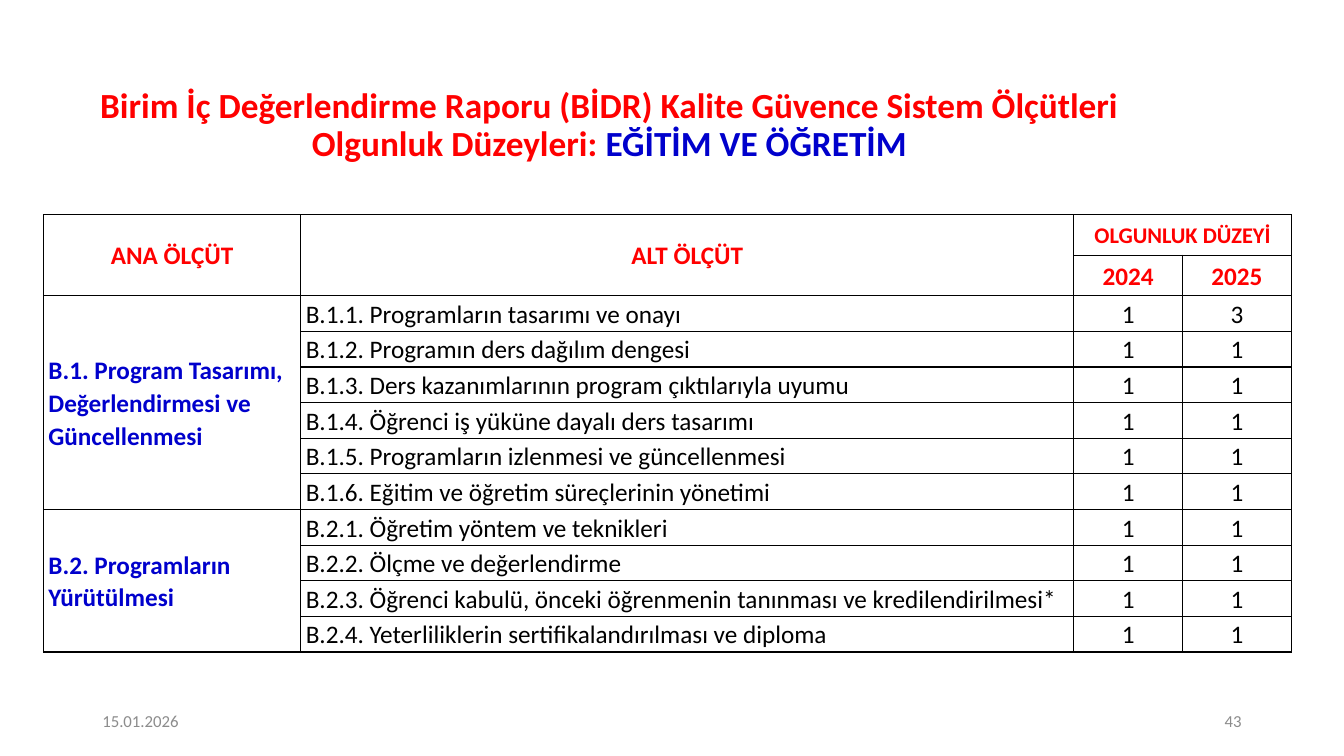
import pptx
import pptx.util
import pptx.dml.color
import pptx.enum.text
import pptx.oxml
import pptx.oxml.ns

Pt = pptx.util.Pt
ALIGN = pptx.enum.text.PP_ALIGN
MIDDLE = pptx.enum.text.MSO_ANCHOR.MIDDLE
COLORS = {"red": "FF0000", "blue": "0000CC", "gray": "8C8C8C", "black": "000000"}
COLS = [183.8, 552.2, 77.7, 77.7]
HEAD, ROW = 28.9, 25.46
YEARS = ["2024", "2025"]
GROUPS = [
    ("B.1. Program Tasarımı, Değerlendirmesi ve Güncellenmesi", [
        ("B.1.1. Programların tasarımı ve onayı", 1, 3),
        ("B.1.2. Programın ders dağılım dengesi", 1, 1),
        ("B.1.3. Ders kazanımlarının program çıktılarıyla uyumu", 1, 1),
        ("B.1.4. Öğrenci iş yüküne dayalı ders tasarımı", 1, 1),
        ("B.1.5. Programların izlenmesi ve güncellenmesi", 1, 1),
        ("B.1.6. Eğitim ve öğretim süreçlerinin yönetimi", 1, 1),
    ]),
    ("B.2. Programların Yürütülmesi", [
        ("B.2.1. Öğretim yöntem ve teknikleri", 1, 1),
        ("B.2.2. Ölçme ve değerlendirme", 1, 1),
        ("B.2.3. Öğrenci kabulü, önceki öğrenmenin tanınması ve kredilendirilmesi*", 1, 1),
        ("B.2.4. Yeterliliklerin sertifikalandırılması ve diploma", 1, 1),
    ]),
]


def write(para, text, size=18, color="black", bold=False, align=ALIGN.LEFT, space=1.0):
    para.alignment = align
    para.line_spacing = space
    run = para.add_run()
    run.text = text
    run.font.name = "Calibri"
    run.font.size = Pt(size)
    run.font.bold = bold
    run.font.color.rgb = pptx.dml.color.RGBColor.from_string(COLORS[color])


def add_box(slide, left, top, width, height):
    box = slide.shapes.add_textbox(Pt(left), Pt(top), Pt(width), Pt(height))
    frame = box.text_frame
    frame.word_wrap = True
    frame.vertical_anchor = MIDDLE
    return frame.paragraphs[0]


def style_cell(cell):
    cell.vertical_anchor = MIDDLE
    cell.margin_left = cell.margin_right = Pt(3.6)
    cell.margin_top = cell.margin_bottom = Pt(0)
    cell.fill.background()
    props = cell._tc.get_or_add_tcPr()
    for place, side in enumerate(["lnL", "lnR", "lnT", "lnB"]):
        line = pptx.oxml.parse_xml(
            f'<a:{side} {pptx.oxml.ns.nsdecls("a")} w="{Pt(1)}"><a:solidFill>'
            f'<a:srgbClr val="{COLORS["black"]}"/></a:solidFill></a:{side}>')
        props.insert(place, line)


def fill_cell(table, row, col, text, **style):
    write(table.cell(row, col).text_frame.paragraphs[0], text, space=1.07, **style)


def add_grid(slide, left, top):
    count = 2 + sum(len(items) for _, items in GROUPS)
    heights = [HEAD] * 2 + [ROW] * (count - 2)
    frame = slide.shapes.add_table(count, len(COLS), Pt(left), Pt(top),
                                   Pt(sum(COLS)), Pt(sum(heights)))
    table = frame.table
    table.first_row = table.horz_banding = False
    for col, width in zip(table.columns, COLS):
        col.width = Pt(width)
    for row, height in zip(table.rows, heights):
        row.height = Pt(height)
    for cell in table.iter_cells():
        style_cell(cell)

    title = dict(color="red", bold=True, align=ALIGN.CENTER)
    for col, text in enumerate(["ANA ÖLÇÜT", "ALT ÖLÇÜT"]):
        table.cell(0, col).merge(table.cell(1, col))
        fill_cell(table, 0, col, text, **title)
    table.cell(0, 2).merge(table.cell(0, 3))
    fill_cell(table, 0, 2, "OLGUNLUK DÜZEYİ", size=16, **title)
    for col, year in enumerate(YEARS, 2):
        fill_cell(table, 1, col, year, **title)

    row = 2
    for group, items in GROUPS:
        table.cell(row, 0).merge(table.cell(row + len(items) - 1, 0))
        fill_cell(table, row, 0, group, color="blue", bold=True)
        for name, *levels in items:
            fill_cell(table, row, 1, name, align=ALIGN.JUSTIFY)
            for col, level in enumerate(levels, 2):
                fill_cell(table, row, col, str(level), align=ALIGN.CENTER)
            row += 1


def main():
    deck = pptx.Presentation()
    deck.slide_width, deck.slide_height = Pt(960), Pt(540)
    slide = deck.slides.add_slide(deck.slide_layouts[6])

    title = add_box(slide, 31, 64.8, 808.6, 50.4)
    style = dict(size=25.2, bold=True, align=ALIGN.CENTER, space=0.9)
    write(title, "Birim İç Değerlendirme Raporu (BİDR) Kalite Güvence Sistem "
          "Ölçütleri Olgunluk Düzeyleri: ", color="red", **style)
    write(title, "EĞİTİM VE ÖĞRETİM", color="blue", **style)

    add_grid(slide, 31, 153.4)
    for left, text, align in [(66, "15.01.2026", ALIGN.LEFT), (678, "43", ALIGN.RIGHT)]:
        write(add_box(slide, left, 500.5, 216, 28.8), text, size=12, color="gray", align=align)
    deck.save("out.pptx")


if __name__ == "__main__":
    main()
